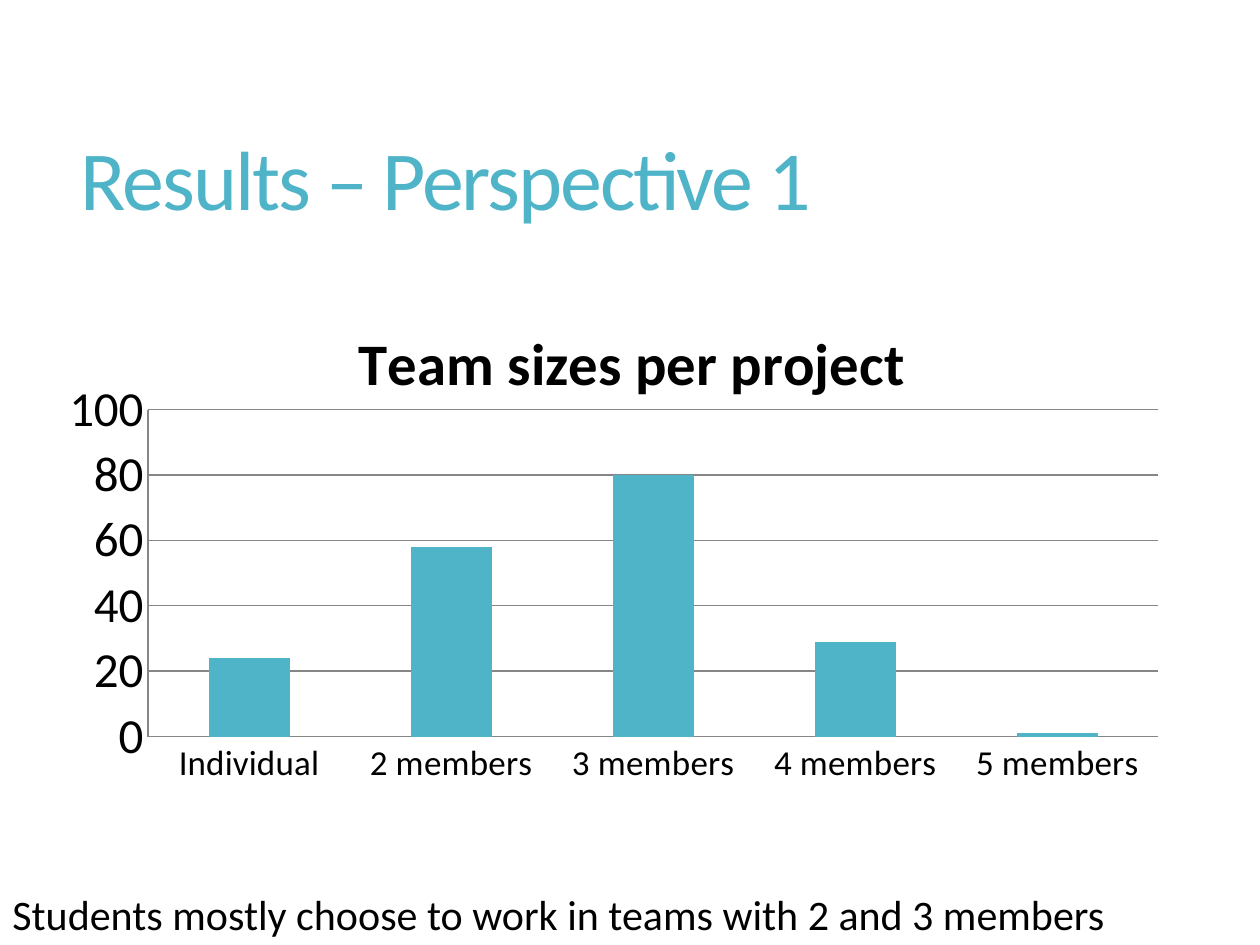
from dataclasses import dataclass

from lxml import etree
from pptx import Presentation, util as u
from pptx.chart.data import CategoryChartData
from pptx.dml.color import RGBColor
from pptx.enum import chart as ch, text as t
from pptx.oxml.ns import qn


@dataclass(frozen=True)
class Theme:
    font: str = "Calibri"
    accent: RGBColor = RGBColor(0x50, 0xB4, 0xC8)
    ink: RGBColor = RGBColor(0, 0, 0)
    grid: RGBColor = RGBColor(0x86, 0x86, 0x86)
    title: float = 48
    chart_title: float = 33.6
    values: float = 28
    note: float = 24
    categories: float = 20


@dataclass(frozen=True)
class Box:
    x: float
    y: float
    w: float
    h: float

    def lengths(self) -> list[int]:
        return [u.Inches(v) for v in (self.x, self.y, self.w, self.h)]


THEME = Theme()
TITLE = Box(0.54, 0.55, 8.84, 1.81)
CHART = Box(0.55, 2.18, 8.82, 4.12)
NOTE = Box(0, 7, 9.25, 0.5)
TEAMS = {"Individual": 24, "2 members": 58, "3 members": 80, "4 members": 29, "5 members": 1}


def style(font, size: float, color: RGBColor, bold: bool = False) -> None:
    font.name, font.size, font.bold = THEME.font, u.Pt(size), bold
    font.color.rgb = color


def add_run(p, words: str, size: float, color: RGBColor, bold: bool = False):
    r = p.add_run()
    r.text = words
    style(r.font, size, color, bold)
    return r


def set_layout(parent, index: int, **shares) -> None:
    for old in parent.findall(qn("c:layout")):
        parent.remove(old)
    layout = etree.Element(qn("c:layout"))
    manual = etree.SubElement(layout, qn("c:manualLayout"))
    for tag, value in shares.items():
        etree.SubElement(manual, qn(f"c:{tag}")).set("val", str(value))
    parent.insert(index, layout)


def add_title(s) -> None:
    sp = s.shapes.title
    sp.left, sp.top, sp.width, sp.height = TITLE.lengths()
    tf = sp.text_frame
    tf.vertical_anchor = t.MSO_ANCHOR.MIDDLE
    p = tf.paragraphs[0]
    p.alignment, p.line_spacing = t.PP_ALIGN.LEFT, 0.9
    r = add_run(p, "Results – Perspective 1", THEME.title, THEME.accent)
    r.font._element.set("spc", "-120")


def add_team_chart(s) -> None:
    data = CategoryChartData()
    data.categories = list(TEAMS)
    data.add_series("Series 1", list(TEAMS.values()))
    chart = s.shapes.add_chart(ch.XL_CHART_TYPE.COLUMN_CLUSTERED, *CHART.lengths(), data).chart
    style(chart.font, THEME.values, THEME.ink)
    chart.has_legend = False

    title = chart.chart_title
    add_run(title.text_frame.paragraphs[0], "Team sizes per project",
            THEME.chart_title, THEME.ink, True)
    title.include_in_layout = False
    set_layout(title._element, 1, xMode="edge", yMode="edge", x=0.25, y=0.07)
    set_layout(chart._chartSpace.chart.plotArea, 0, layoutTarget="inner", xMode="edge",
               yMode="edge", x=0.07, y=0.26, w=0.91, h=0.63)

    plot = chart.plots[0]
    plot.gap_width, plot.vary_by_categories = 150, False
    fill = plot.series[0].format.fill
    fill.solid()
    fill.fore_color.rgb = THEME.accent

    values = chart.value_axis
    values.minimum_scale, values.maximum_scale, values.major_unit = 0, 100, 20
    values.has_major_gridlines = True
    for axis, size in ((values, THEME.values), (chart.category_axis, THEME.categories)):
        axis.major_tick_mark = axis.minor_tick_mark = ch.XL_TICK_MARK.NONE
        style(axis.tick_labels.font, size, THEME.ink)
    for line in (values.format.line, chart.category_axis.format.line,
                 values.major_gridlines.format.line):
        line.color.rgb, line.width = THEME.grid, u.Pt(0.75)


def add_note(s) -> None:
    tf = s.shapes.add_textbox(*NOTE.lengths()).text_frame
    tf.word_wrap, tf.auto_size = True, t.MSO_AUTO_SIZE.SHAPE_TO_FIT_TEXT
    add_run(tf.paragraphs[0], "Students mostly choose to work in teams with 2 and 3 members",
            THEME.note, THEME.ink)


def main() -> None:
    prs = Presentation()
    prs.slide_width, prs.slide_height = u.Inches(10), u.Inches(7.5)
    s = prs.slides.add_slide(prs.slide_layouts.get_by_name("Title Only"))
    add_title(s)
    add_team_chart(s)
    add_note(s)
    prs.save("out.pptx")


if __name__ == "__main__":
    main()
